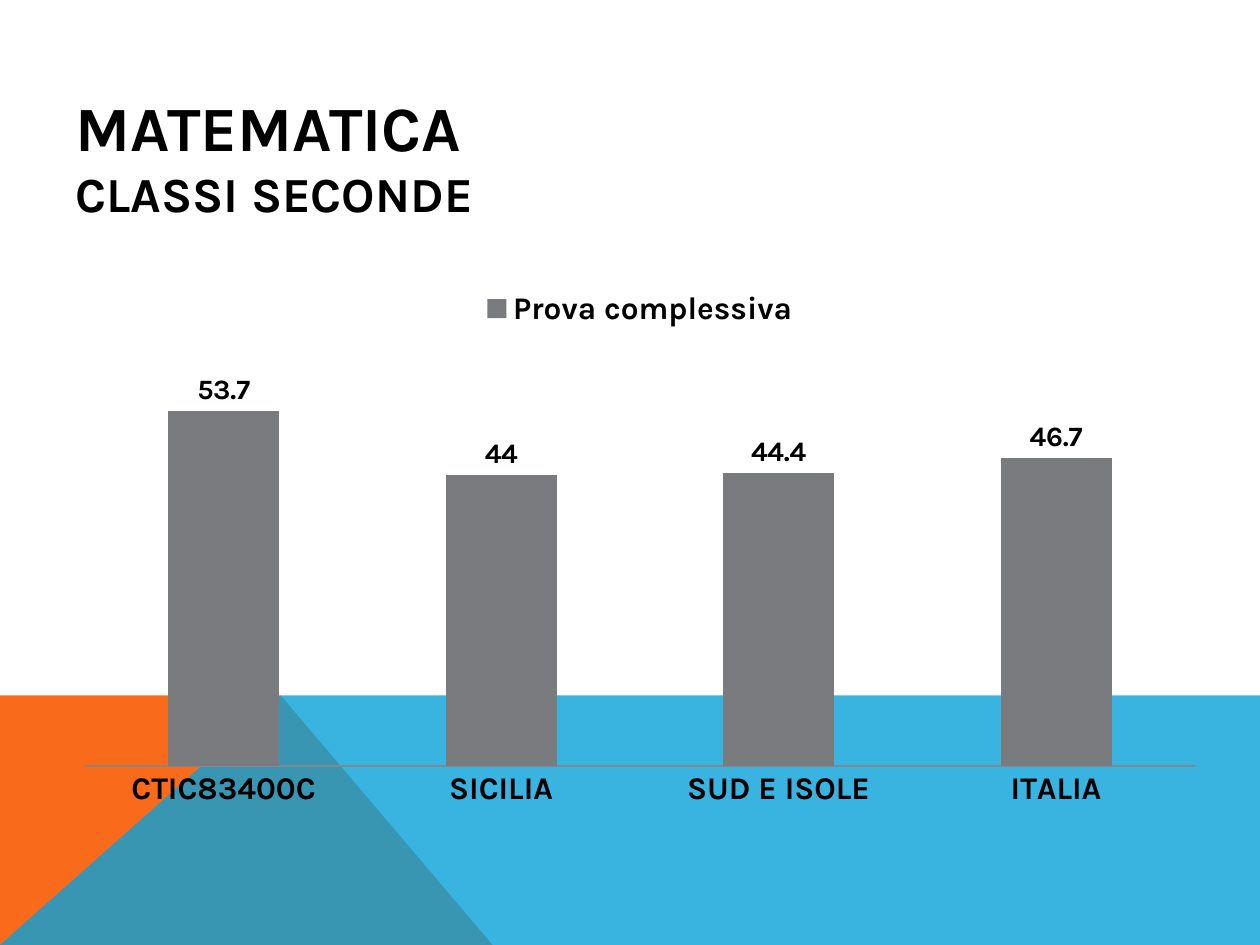
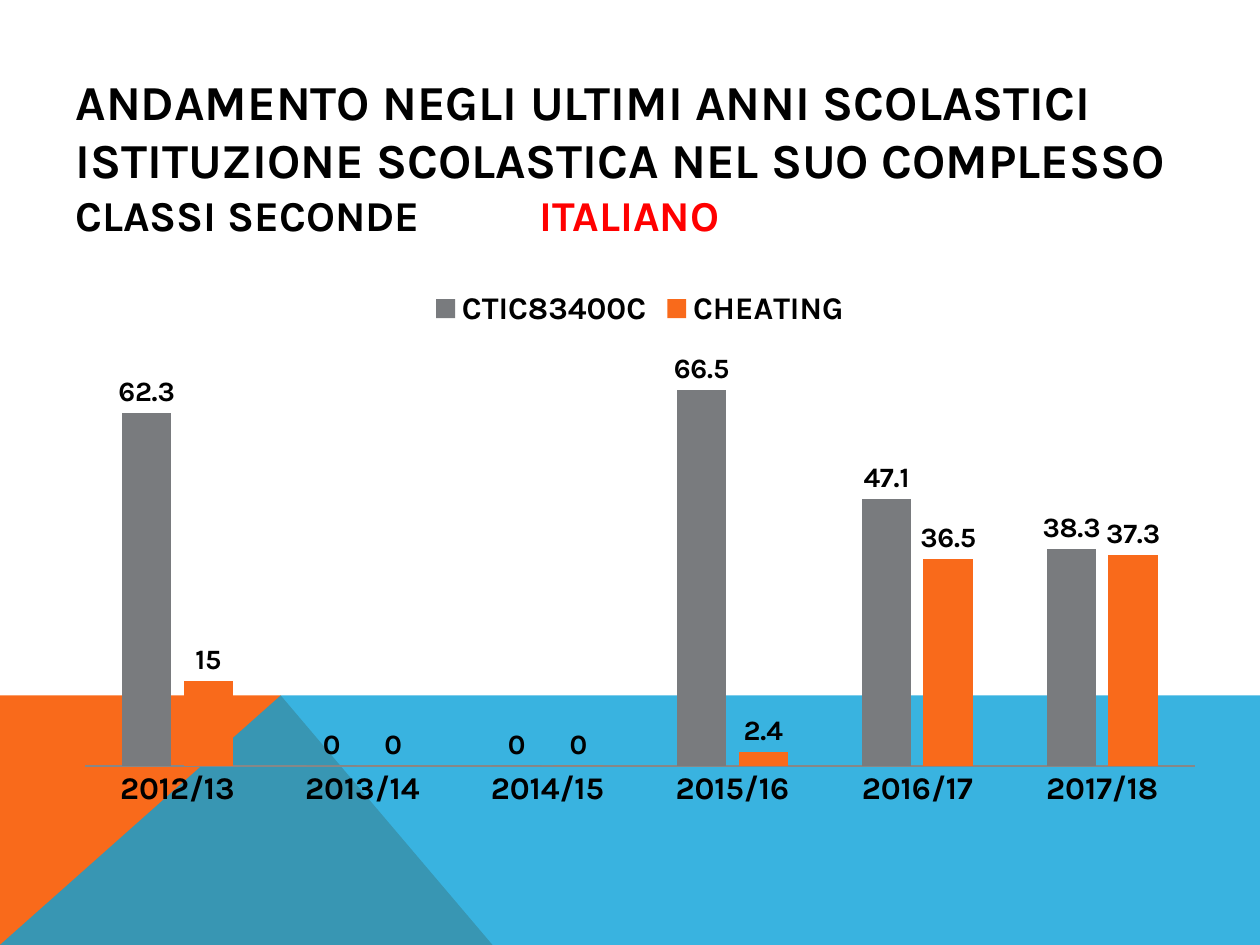
import pptx
import pptx.chart.data
import pptx.dml.color
import pptx.enum.chart
import pptx.enum.text
import pptx.oxml
import pptx.oxml.ns
import pptx.util
from lxml import etree

Cm, Pt = pptx.util.Cm, pptx.util.Pt
RGB = pptx.dml.color.RGBColor.from_string
qn = pptx.oxml.ns.qn


class Theme:
    font = "Karla"
    text, accent = "000000", "FF0000"
    orange, blue, axis = "F96A1B", "08A1D9", "878787"
    series = ("797B7E", "F96A1B")
    chart_size, label_size = 18, 16


SLIDES = [
    {
        "title": [
            [("MATEMATICA", 36, Theme.text)],
            [("CLASSI SECONDE", 28, Theme.text)],
        ],
        "categories": ["CTIC83400C", "SICILIA", "SUD E ISOLE", "ITALIA"],
        "series": {"Prova complessiva": [53.7, 44, 44.4, 46.7]},
        "axis_max": 60,
    },
    {
        "title": [
            [("ANDAMENTO NEGLI ULTIMI ANNI SCOLASTICI", 27.9, Theme.text)],
            [("ISTITUZIONE SCOLASTICA NEL SUO COMPLESSO", 27.9, Theme.text)],
            [("CLASSI SECONDE\t", 24.3, Theme.text), ("ITALIANO", 24.3, Theme.accent)],
        ],
        "categories": ["2012/13", "2013/14", "2014/15", "2015/16", "2016/17", "2017/18"],
        "series": {
            "CTIC83400C": [62.3, 0, 0, 66.5, 47.1, 38.3],
            "CHEATING": [15, 0, 0, 2.4, 36.5, 37.3],
        },
        "axis_max": 70,
    },
]

WIDTH, HEIGHT = 25.4, 19.05
BAND_TOP, BAND_PEAK = 14.02, 5.66
BANDS = [
    ([(0, HEIGHT), (0, BAND_TOP), (BAND_PEAK, BAND_TOP), (9.93, HEIGHT)], Theme.orange, 100),
    ([(0, HEIGHT), (BAND_PEAK, BAND_TOP), (WIDTH, BAND_TOP), (WIDTH, HEIGHT)], Theme.blue, 80),
]
TITLE_BOX = [Cm(v) for v in (1.27, 0.94, 22.86, 4.39)]
CHART_BOX = [Cm(v) for v in (1.7, 5.54, 22.4, 11.61)]
PLOT = {"x": 0, "y": 0.165, "w": 1, "h": 0.688}
TAB_STOP = Cm(9.35)


def style_font(font, size, color=Theme.text, bold=True):
    font.name, font.size, font.bold = Theme.font, Pt(size), bold
    font.color.rgb = RGB(color)


def add_bands(slide):
    for points, color, opacity in BANDS:
        corners = [(Cm(x), Cm(y)) for x, y in points]
        builder = slide.shapes.build_freeform(*corners[0], scale=1.0)
        builder.add_line_segments(corners[1:], close=True)
        sp = builder.convert_to_shape()
        sp.shadow.inherit = False
        sp.line.fill.background()
        sp.fill.solid()
        sp.fill.fore_color.rgb = RGB(color)
        if opacity < 100:
            clr = sp.fill._xPr.find(".//" + qn("a:srgbClr"))
            etree.SubElement(clr, qn("a:alpha"), val=str(opacity * 1000))


def fill_title(slide, lines):
    title = slide.shapes.title
    title.left, title.top, title.width, title.height = TITLE_BOX
    tf = title.text_frame
    tf.word_wrap = True
    tf.auto_size = pptx.enum.text.MSO_AUTO_SIZE.NONE
    tf.vertical_anchor = pptx.enum.text.MSO_ANCHOR.MIDDLE
    for i, line in enumerate(lines):
        p = tf.add_paragraph() if i else tf.paragraphs[0]
        p.alignment = pptx.enum.text.PP_ALIGN.LEFT
        for text, size, color in line:
            r = p.add_run()
            r.text = text
            style_font(r.font, size, color)
            if "\t" in text:
                tabs = etree.SubElement(p._p.get_or_add_pPr(), qn("a:tabLst"))
                etree.SubElement(tabs, qn("a:tab"), pos=str(TAB_STOP), algn="l")


def place_plot(chart):
    area = chart._chartSpace.find(".//" + qn("c:plotArea"))
    layout = area.find(qn("c:layout"))
    if layout is None:
        layout = etree.Element(qn("c:layout"))
        area.insert(0, layout)
    manual = etree.SubElement(layout, qn("c:manualLayout"))
    settings = [("layoutTarget", "inner"), ("xMode", "edge"), ("yMode", "edge"), *PLOT.items()]
    for name, value in settings:
        etree.SubElement(manual, qn("c:" + name), val=str(value))


def add_column_chart(slide, content):
    enums = pptx.enum.chart
    data = pptx.chart.data.CategoryChartData()
    data.categories = content["categories"]
    for name, values in content["series"].items():
        data.add_series(name, values)
    frame = slide.shapes.add_chart(enums.XL_CHART_TYPE.COLUMN_CLUSTERED, *CHART_BOX, data)
    chart = frame.chart
    style_font(chart.font, Theme.chart_size, bold=False)
    chart.has_title = False
    chart.has_legend = True
    chart.legend.position = enums.XL_LEGEND_POSITION.TOP
    chart.legend.include_in_layout = False
    style_font(chart.legend.font, Theme.chart_size)

    cat = chart.category_axis
    cat.major_tick_mark = enums.XL_TICK_MARK.NONE
    cat.format.line.color.rgb = RGB(Theme.axis)
    style_font(cat.tick_labels.font, Theme.chart_size)
    val = chart.value_axis
    val.minimum_scale, val.maximum_scale = 0, content["axis_max"]
    val.has_major_gridlines = False
    val.visible = False

    plot = chart.plots[0]
    plot.gap_width, plot.overlap = 150, -25
    plot.vary_by_categories = False
    for series, color in zip(plot.series, Theme.series):
        series.format.fill.solid()
        series.format.fill.fore_color.rgb = RGB(color)
        labels = series.data_labels
        labels.show_value = True
        labels.position = enums.XL_LABEL_POSITION.OUTSIDE_END
        style_font(labels.font, Theme.label_size)
    place_plot(chart)


def main():
    prs = pptx.Presentation()
    prs.slide_width, prs.slide_height = Cm(WIDTH), Cm(HEIGHT)
    title_only = prs.slide_layouts[5]
    for content in SLIDES:
        slide = prs.slides.add_slide(title_only)
        add_bands(slide)
        fill_title(slide, content["title"])
        add_column_chart(slide, content)
    prs.save("out.pptx")


if __name__ == "__main__":
    main()
